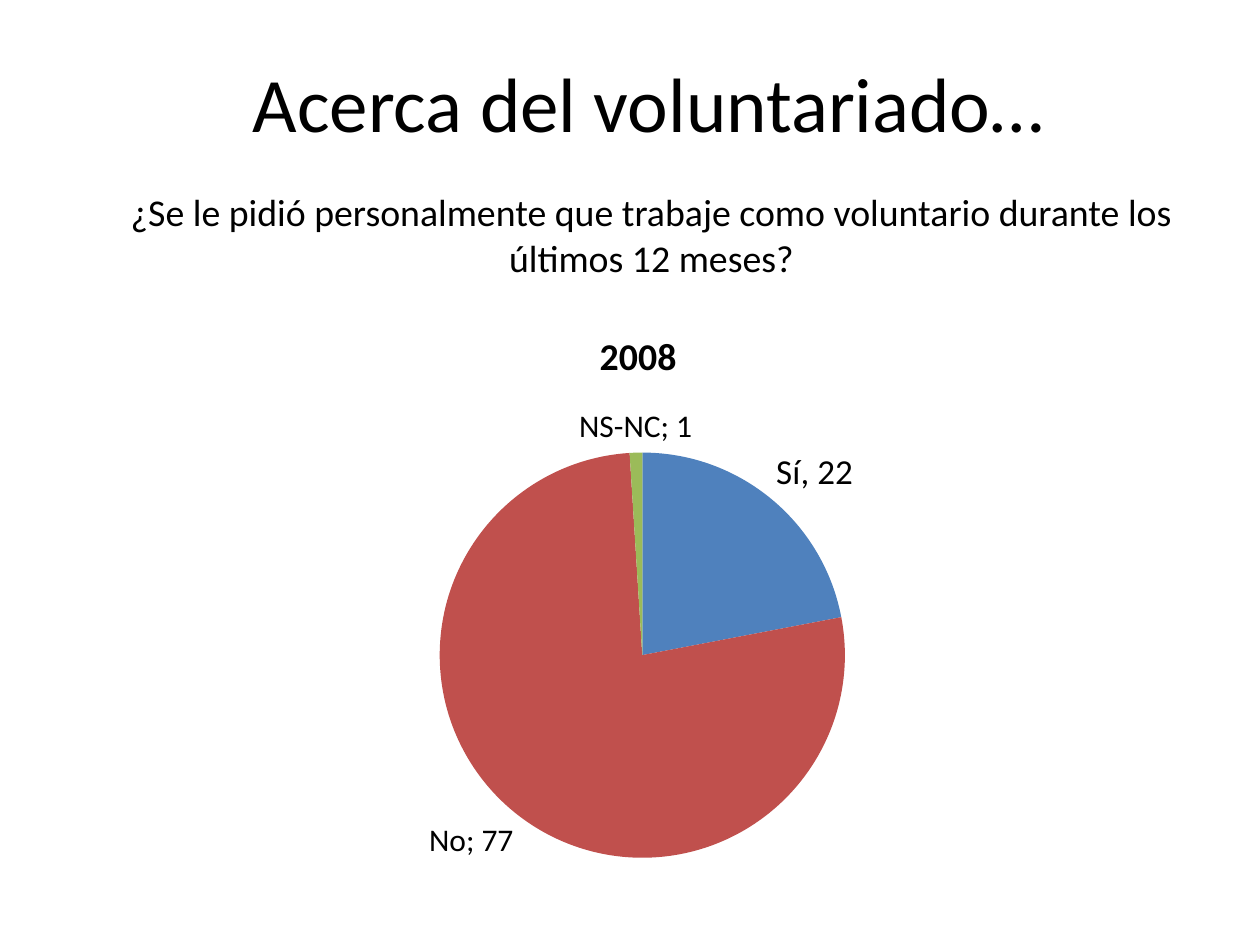
from lxml import etree
from pptx import Presentation
from pptx.chart.data import CategoryChartData
from pptx.dml.color import RGBColor
from pptx.enum.chart import XL_CHART_TYPE, XL_LABEL_POSITION
from pptx.enum.text import MSO_ANCHOR, PP_ALIGN
from pptx.oxml import parse_xml
from pptx.oxml.ns import nsdecls, qn
from pptx.util import Inches, Pt

PIE = XL_CHART_TYPE.PIE
OUTSIDE_END = XL_LABEL_POSITION.OUTSIDE_END
MIDDLE = MSO_ANCHOR.MIDDLE
CENTER = PP_ALIGN.CENTER

FONT = "Calibri"
COLORS = {
    "background": "FFFFFF",
    "text": "000000",
    "Sí": "4F81BD",
    "No": "C0504D",
    "NS-NC": "9BBB59",
}
ANSWERS = {"Sí": 22, "No": 77, "NS-NC": 1}
PLOT_AREA = {"x": 0.26, "y": 0.25, "w": 0.49, "h": 0.68}


def color(name):
    return RGBColor.from_string(COLORS[name])


def style_font(font, size, bold=False):
    font.name = FONT
    font.size = Pt(size)
    font.bold = bold
    font.color.rgb = color("text")


def place_text(shape, box, text, size, bottom_margin=0.05):
    shape.left, shape.top, shape.width, shape.height = map(Inches, box)
    frame = shape.text_frame
    frame.word_wrap = True
    frame.vertical_anchor = MIDDLE
    frame.margin_bottom = Inches(bottom_margin)
    frame.text = text
    paragraph = frame.paragraphs[0]
    paragraph.alignment = CENTER
    style_font(paragraph.runs[0].font, size)


def set_plot_area(chart):
    plot_area = chart.plots[0]._element.getparent()
    for layout in plot_area.findall(qn("c:layout")):
        plot_area.remove(layout)
    layout = parse_xml(f"<c:layout {nsdecls('c')}><c:manualLayout/></c:layout>")
    manual = layout[0]
    settings = {"layoutTarget": "inner", "xMode": "edge", "yMode": "edge", **PLOT_AREA}
    for tag, value in settings.items():
        etree.SubElement(manual, qn(f"c:{tag}")).set("val", str(value))
    plot_area.insert(0, layout)


def add_answer_chart(slide, box):
    data = CategoryChartData(number_format="0")
    data.categories = list(ANSWERS)
    data.add_series("2008", ANSWERS.values())
    chart = slide.shapes.add_chart(PIE, *map(Inches, box), data).chart
    style_font(chart.font, 18)
    chart.has_legend = False
    chart.has_title = True
    title = chart.chart_title.text_frame
    title.text = "2008"
    style_font(title.paragraphs[0].runs[0].font, 21.6, bold=True)
    set_plot_area(chart)

    plot = chart.plots[0]
    plot.vary_by_categories = True
    series = plot.series[0]
    for index, answer in enumerate(ANSWERS):
        fill = series.points[index].format.fill
        fill.solid()
        fill.fore_color.rgb = color(answer)

    labels = series.data_labels
    style_font(labels.font, 18)
    labels.number_format = "0"
    labels.number_format_is_linked = False
    labels.show_value = True
    labels.show_category_name = True
    labels.position = OUTSIDE_END
    separator = parse_xml(f"<c:separator {nsdecls('c')}>; </c:separator>")
    labels._element.find(qn("c:showBubbleSize")).addnext(separator)

    yes_label = series.points[0].data_label
    yes_label.text_frame.text = "Sí, 22"
    style_font(yes_label.text_frame.paragraphs[0].runs[0].font, 20)
    yes_label.position = OUTSIDE_END


def build_slide(presentation):
    slide = presentation.slides.add_slide(presentation.slide_layouts[5])
    slide.background.fill.solid()
    slide.background.fill.fore_color.rgb = color("background")
    question = "¿Se le pidió personalmente que trabaje como voluntario durante los últimos 12 meses?"
    place_text(slide.shapes.title, (0.67, 1.55, 9, 1.25), question, 21.6, bottom_margin=0.68)
    add_answer_chart(slide, (1.77, 2.41, 6.59, 4.73))
    heading = slide.shapes.add_textbox(0, 0, 0, 0)
    place_text(heading, (0.9, 0, 8.5, 1.61), "Acerca del voluntariado…", 44)


def main():
    presentation = Presentation()
    presentation.slide_width = Inches(10)
    presentation.slide_height = Inches(7.5)
    build_slide(presentation)
    presentation.save("out.pptx")


if __name__ == "__main__":
    main()
